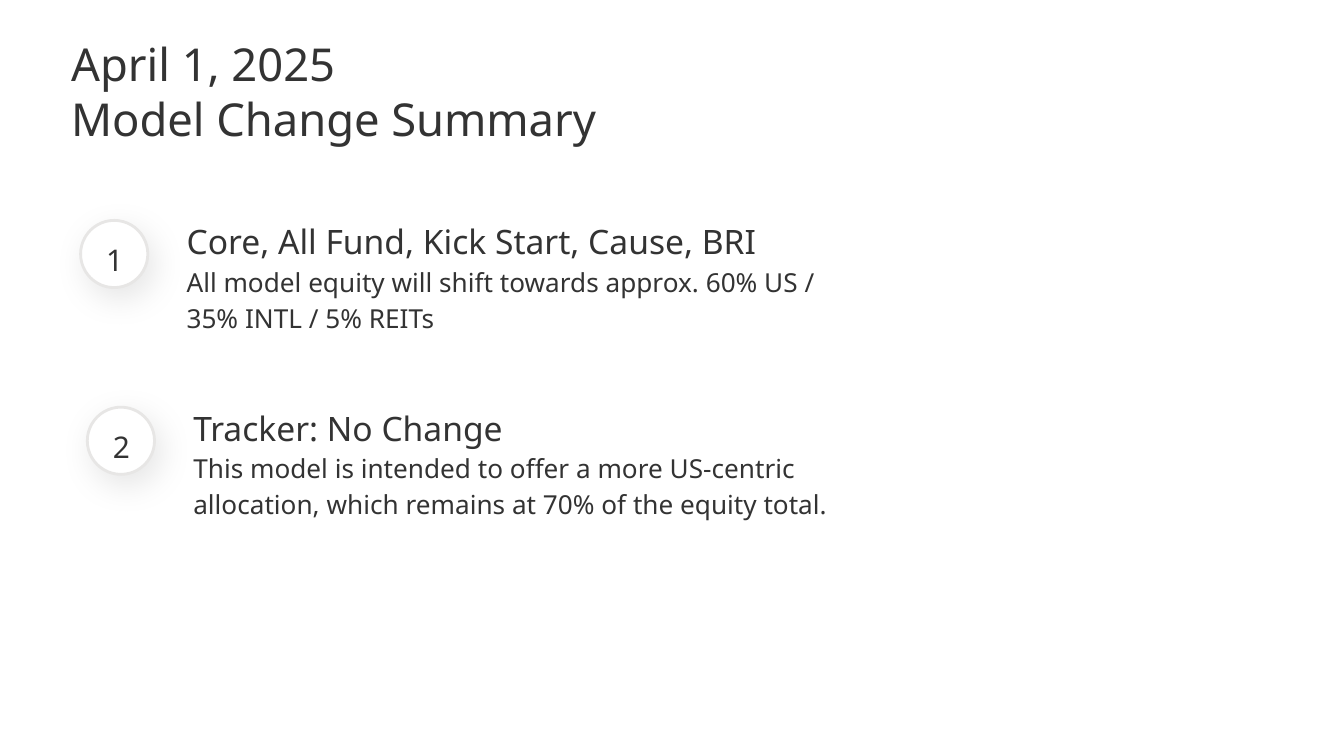
from dataclasses import dataclass

import pptx
import pptx.dml.color
import pptx.enum.shapes
import pptx.enum.text
import pptx.oxml
import pptx.oxml.ns
import pptx.util
from pptx.util import Inches

FONT = "Noto Sans"
INK, WHITE, RING = "333333", "FFFFFF", "E7E6E5"
SLIDE_WIDTH = 10
SLIDE_HEIGHT = SLIDE_WIDTH * 9 / 16
SHADOW_XML = (
    f'<a:effectLst {pptx.oxml.ns.nsdecls("a")}>'
    '<a:outerShdw blurRad="228600" dist="76200" dir="3600000" algn="bl" rotWithShape="0">'
    '<a:srgbClr val="000000"><a:alpha val="9000"/></a:srgbClr>'
    '</a:outerShdw></a:effectLst>'
)


@dataclass
class ModelChange:
    number: str
    heading: str
    detail: str
    left: float
    top: float
    text_top: float
    text_height: float


CHANGES = [
    ModelChange("1", "Core, All Fund, Kick Start, Cause, BRI",
                "All model equity will shift towards approx. 60% US / 35% INTL / 5% REITs",
                0.6, 1.64, 1.5, 1.06),
    ModelChange("2", "Tracker: No Change",
                "This model is intended to offer a more US-centric allocation, "
                "which remains at 70% of the equity total.",
                0.65, 3.03, 2.89, 1.33),
]


def color(value: str) -> pptx.dml.color.RGBColor:
    return pptx.dml.color.RGBColor.from_string(value)


def write(frame, lines: list[tuple[str, float]], spacing: float, inset: float,
          anchor=pptx.enum.text.MSO_ANCHOR.TOP, wrap: bool = True) -> None:
    """Fill a text frame with (text, point size) paragraphs."""
    frame_format = {
        "word_wrap": wrap,
        "vertical_anchor": anchor,
        "auto_size": pptx.enum.text.MSO_AUTO_SIZE.NONE,
    }
    for side in ("left", "top", "right", "bottom"):
        frame_format[f"margin_{side}"] = Inches(inset)
    for name, value in frame_format.items():
        setattr(frame, name, value)

    for index, (text, size) in enumerate(lines):
        paragraph = frame.add_paragraph() if index else frame.paragraphs[0]
        paragraph.alignment = pptx.enum.text.PP_ALIGN.LEFT
        paragraph.line_spacing = spacing
        paragraph.space_before = pptx.util.Pt(0)
        run = paragraph.add_run()
        run.text = text
        run.font.name = FONT
        run.font.size = pptx.util.Pt(size)
        run.font.color.rgb = color(INK)


def add_text(slide, left: float, top: float, width: float, height: float,
             lines: list[tuple[str, float]], inset: float, wrap: bool = True) -> None:
    box = slide.shapes.add_textbox(Inches(left), Inches(top), Inches(width), Inches(height))
    write(box.text_frame, lines, 1.15, inset, wrap=wrap)


def add_badge(slide, change: ModelChange) -> None:
    """Draw the shadowed circle with its number."""
    circle = slide.shapes.add_shape(
        pptx.enum.shapes.MSO_SHAPE.OVAL,
        Inches(change.left), Inches(change.top), Inches(0.5), Inches(0.5))
    circle.fill.solid()
    circle.fill.fore_color.rgb = color(WHITE)
    circle.line.color.rgb = color(RING)
    circle.line.width = pptx.util.Pt(1.5)
    circle.element.spPr.append(pptx.oxml.parse_xml(SHADOW_XML))
    add_text(slide, change.left + 0.19, change.top + 0.12, 0.16, 0.27,
             [(change.number, 16)], inset=0, wrap=False)


def add_change(slide, change: ModelChange) -> None:
    add_badge(slide, change)
    add_text(slide, change.left + 0.69, change.text_top, 5.04, change.text_height,
             [(change.heading, 18), (change.detail, 14)], inset=0.1)


def add_title(slide) -> None:
    title = slide.shapes.title
    place = {"left": 0.43, "top": 0.14, "width": 8.66, "height": 1.07}
    for name, value in place.items():
        setattr(title, name, Inches(value))
    write(title.text_frame, [("April 1, 2025", 24.3), ("Model Change Summary", 24.3)],
          1.0, 0.1, anchor=pptx.enum.text.MSO_ANCHOR.MIDDLE)


def main() -> None:
    deck = pptx.Presentation()
    deck.slide_width, deck.slide_height = Inches(SLIDE_WIDTH), Inches(SLIDE_HEIGHT)
    slide = deck.slides.add_slide(deck.slide_layouts.get_by_name("Title Only"))
    slide.background.fill.solid()
    slide.background.fill.fore_color.rgb = color(WHITE)
    add_title(slide)
    for change in CHANGES:
        add_change(slide, change)
    deck.save("out.pptx")


if __name__ == "__main__":
    main()
